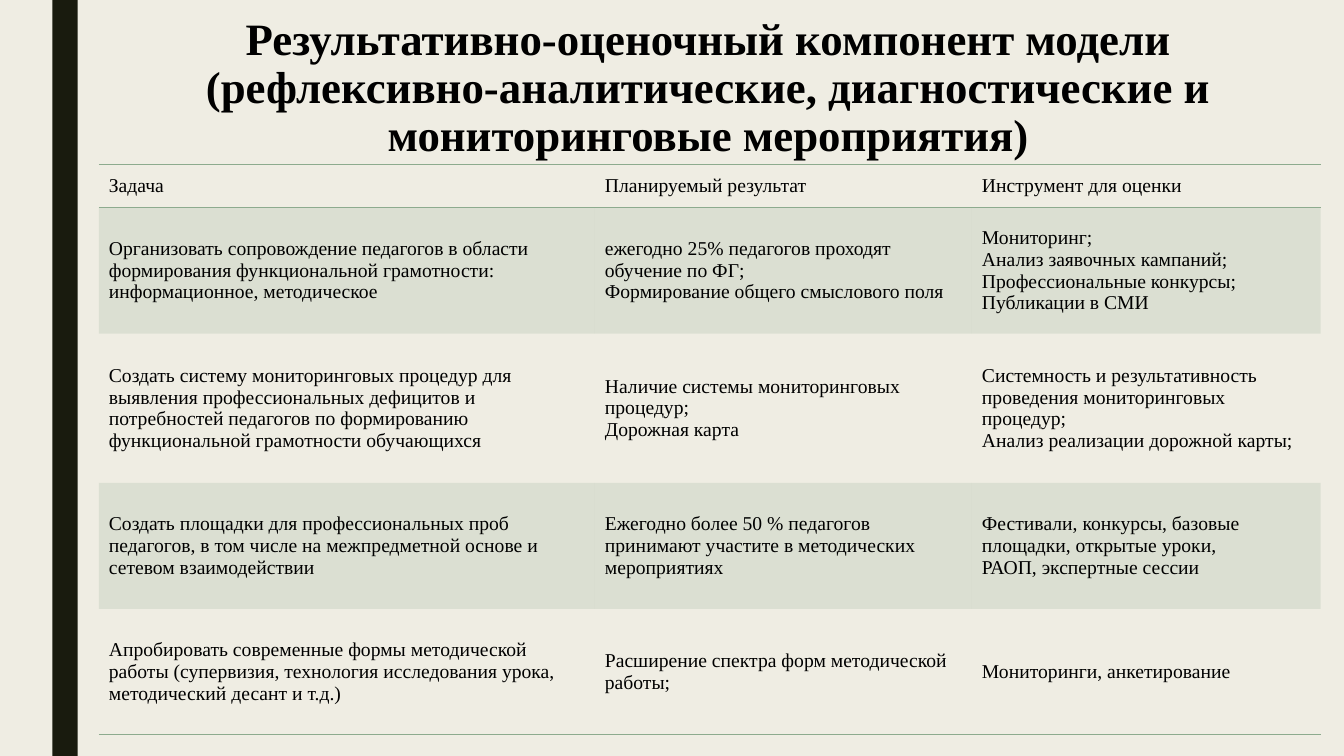
"""Build a slide with a table of tasks, planned results and assessment tools."""
import pptx
import pptx.util
import pptx.dml.color
import pptx.enum.shapes
import pptx.enum.text
import pptx.oxml
import pptx.oxml.ns

TITLE = ("Результативно-оценочный компонент модели\v"
         "(рефлексивно-аналитические, диагностические и мониторинговые мероприятия)")
ROWS = [
    ("Задача", "Планируемый результат", "Инструмент для оценки"),
    ("Организовать сопровождение педагогов в области\v"
     "формирования функциональной грамотности: информационное, методическое",
     "ежегодно 25% педагогов проходят обучение по ФГ;\vФормирование общего смыслового поля",
     "Мониторинг;\vАнализ заявочных кампаний;\vПрофессиональные конкурсы;\vПубликации в СМИ"),
    ("Создать систему мониторинговых процедур для выявления профессиональных дефицитов и\v"
     "потребностей педагогов по формированию функциональной грамотности обучающихся",
     "Наличие системы мониторинговых процедур;\vДорожная карта",
     "Системность и результативность проведения мониторинговых процедур;\v"
     "Анализ реализации дорожной карты;"),
    ("Создать площадки для профессиональных проб\v"
     "педагогов, в том числе на межпредметной основе и сетевом взаимодействии",
     "Ежегодно более 50 % педагогов принимают участите в методических мероприятиях",
     "Фестивали, конкурсы, базовые площадки, открытые уроки,\vРАОП, экспертные сессии"),
    ("Апробировать современные формы методической работы "
     "(супервизия, технология исследования урока,\vметодический десант и т.д.)",
     "Расширение спектра форм методической работы;",
     "Мониторинги, анкетирование"),
]
WIDTHS = [4.92, 3.74, 3.46]
HEIGHTS = [0.43, 1.25, 1.48, 1.25, 1.25]
COLORS = {"page": "EFEDE3", "bar": "191B0E", "green": "8DAB8E", "text": "000000"}
FONT = "Times New Roman"
PLAIN = "{2D5ABB26-0587-4C30-8999-92F81FD0307C}"

Inches = pptx.util.Inches
NS = pptx.oxml.ns.nsdecls("a")


def color(name):
    return pptx.dml.color.RGBColor.from_string(COLORS[name])


def style(frame, size, bold=False):
    for par in frame.paragraphs:
        for run in par.runs:
            run.font.name = FONT
            run.font.size = pptx.util.Pt(size)
            run.font.bold = bold
            run.font.color.rgb = color("text")


def add_edge(cell, side):
    cell._tc.get_or_add_tcPr().insert(0, pptx.oxml.parse_xml(
        f'<a:ln{side} {NS} w="12700"><a:solidFill>'
        f'<a:srgbClr val="{COLORS["green"]}"/></a:solidFill></a:ln{side}>'))


def tint(cell):
    cell.fill.solid()
    cell.fill.fore_color.rgb = color("green")
    tone = cell._tc.tcPr.find(".//" + pptx.oxml.ns.qn("a:srgbClr"))
    tone.append(pptx.oxml.parse_xml(f'<a:alpha {NS} val="20000"/>'))


def add_title(slide):
    title = slide.shapes.title
    title.left, title.top = Inches(1.5), Inches(0.12)
    title.width, title.height = Inches(11.05), Inches(1.4)
    frame = title.text_frame
    frame.text = TITLE
    frame.word_wrap = True
    frame.auto_size = pptx.enum.text.MSO_AUTO_SIZE.NONE
    frame.vertical_anchor = pptx.enum.text.MSO_ANCHOR.TOP
    par = frame.paragraphs[0]
    par.alignment = pptx.enum.text.PP_ALIGN.CENTER
    par.line_spacing = 0.89
    style(frame, 32, True)


def add_bar(slide):
    bar = slide.shapes.add_shape(pptx.enum.shapes.MSO_SHAPE.RECTANGLE,
                                 Inches(0.52), 0, Inches(0.25), Inches(7.5))
    bar.shadow.inherit = False
    bar.fill.solid()
    bar.fill.fore_color.rgb = color("bar")
    bar.line.fill.background()


def add_grid(slide):
    grid = slide.shapes.add_table(len(ROWS), len(WIDTHS), Inches(0.98), Inches(1.63),
                                  Inches(sum(WIDTHS)), Inches(sum(HEIGHTS))).table
    grid.first_row = grid.horz_banding = False
    grid._tbl.tblPr.find(pptx.oxml.ns.qn("a:tableStyleId")).text = PLAIN
    for col, width in zip(grid.columns, WIDTHS):
        col.width = Inches(width)
    edges = {0: "BT", len(ROWS) - 1: "B"}
    for i, texts in enumerate(ROWS):
        grid.rows[i].height = Inches(HEIGHTS[i])
        for j, text in enumerate(texts):
            cell = grid.cell(i, j)
            cell.text_frame.text = text
            cell.vertical_anchor = pptx.enum.text.MSO_ANCHOR.MIDDLE
            style(cell.text_frame, 14)
            if i % 2:
                tint(cell)
            else:
                cell.fill.background()
            for side in edges.get(i, ""):
                add_edge(cell, side)


def main():
    deck = pptx.Presentation()
    deck.slide_width, deck.slide_height = Inches(13.33), Inches(7.5)
    slide = deck.slides.add_slide(deck.slide_layouts[5])
    slide.background.fill.solid()
    slide.background.fill.fore_color.rgb = color("page")
    add_bar(slide)
    add_title(slide)
    add_grid(slide)
    deck.save("out.pptx")


if __name__ == "__main__":
    main()
